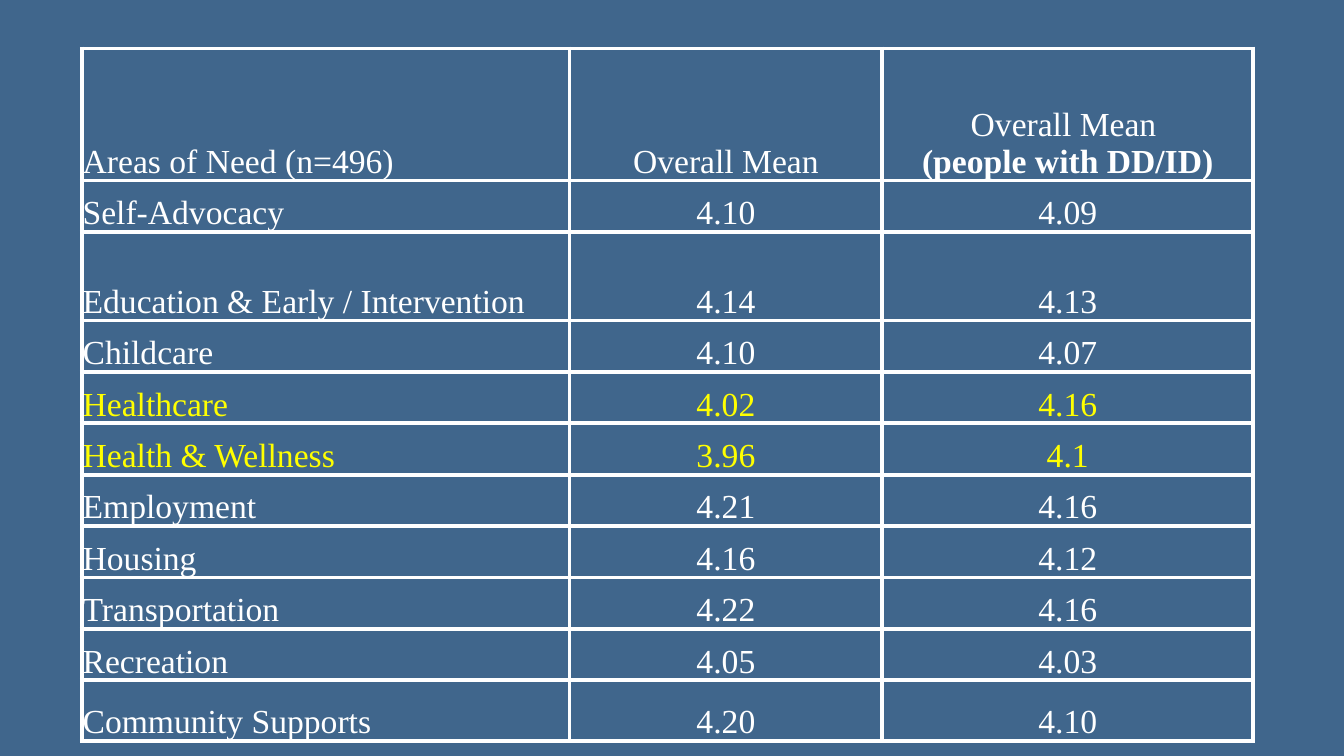
from lxml import etree
from pptx import Presentation
from pptx.dml.color import RGBColor
from pptx.enum.text import MSO_ANCHOR, PP_ALIGN
from pptx.oxml.ns import qn
from pptx.util import Inches, Pt

COLORS = {"background": "40668C", "text": "FFFFFF", "highlight": "FFFF00",
          "border": "FFFFFF"}
FONT = "Times New Roman"

HEADER = ("Areas of Need (n=496)", "Overall Mean",
          "Overall Mean \n(people with DD/ID)")
NEEDS = [
    ("Self-Advocacy", "4.10", "4.09"),
    ("Education & Early / Intervention", "4.14", "4.13"),
    ("Childcare", "4.10", "4.07"),
    ("Healthcare", "4.02", "4.16"),
    ("Health & Wellness", "3.96", "4.1"),
    ("Employment", "4.21", "4.16"),
    ("Housing", "4.16", "4.12"),
    ("Transportation", "4.22", "4.16"),
    ("Recreation", "4.05", "4.03"),
    ("Community Supports", "4.20", "4.10"),
]
HIGHLIGHTED = {"Healthcare", "Health & Wellness"}
COL_WIDTHS = (4.84, 3.1, 3.68)
ROW_HEIGHT = 0.51
TALL_ROWS = {0: 1.31, 2: 0.88, 10: 0.6}


def rgb(name):
    return RGBColor.from_string(COLORS[name])


def set_borders(cell, width=3):
    # Borders come before the fill in the cell properties
    tcPr = cell._tc.get_or_add_tcPr()
    for i, side in enumerate(("lnL", "lnR", "lnT", "lnB")):
        ln = etree.Element(qn(f"a:{side}"), w=str(Pt(width)))
        fill = etree.SubElement(ln, qn("a:solidFill"))
        etree.SubElement(fill, qn("a:srgbClr"), val=COLORS["border"])
        tcPr.insert(i, ln)


def fill_cell(cell, text, color, align):
    cell.fill.background()
    set_borders(cell)
    cell.vertical_anchor = MSO_ANCHOR.BOTTOM
    cell.margin_left = cell.margin_right = cell.margin_top = Inches(0.01)
    cell.margin_bottom = 0
    cell.text_frame.text = text
    for i, p in enumerate(cell.text_frame.paragraphs):
        p.alignment = align
        p.font.name = FONT
        p.font.size = Pt(24)
        p.font.bold = i > 0
        p.font.color.rgb = rgb(color)


def add_needs_table(s, left, top, width, height):
    rows = [HEADER, *NEEDS]
    table = s.shapes.add_table(len(rows), len(HEADER), Inches(left), Inches(top),
                               Inches(width), Inches(height)).table
    table.first_row = table.horz_banding = False

    # Column and row sizes
    for col, col_width in zip(table.columns, COL_WIDTHS):
        col.width = Inches(col_width)
    for i, row in enumerate(table.rows):
        row.height = Inches(TALL_ROWS.get(i, ROW_HEIGHT))

    # Cell contents
    for i, values in enumerate(rows):
        color = "highlight" if values[0] in HIGHLIGHTED else "text"
        for j, text in enumerate(values):
            align = PP_ALIGN.CENTER if j else PP_ALIGN.LEFT
            fill_cell(table.cell(i, j), text, color, align)


def main():
    prs = Presentation()
    prs.slide_width, prs.slide_height = Inches(13.33), Inches(7.5)
    s = prs.slides.add_slide(prs.slide_layouts[6])
    s.background.fill.solid()
    s.background.fill.fore_color.rgb = rgb("background")
    add_needs_table(s, 0.81, 0.48, 11.62, 6.85)
    prs.save("out.pptx")


if __name__ == "__main__":
    main()
